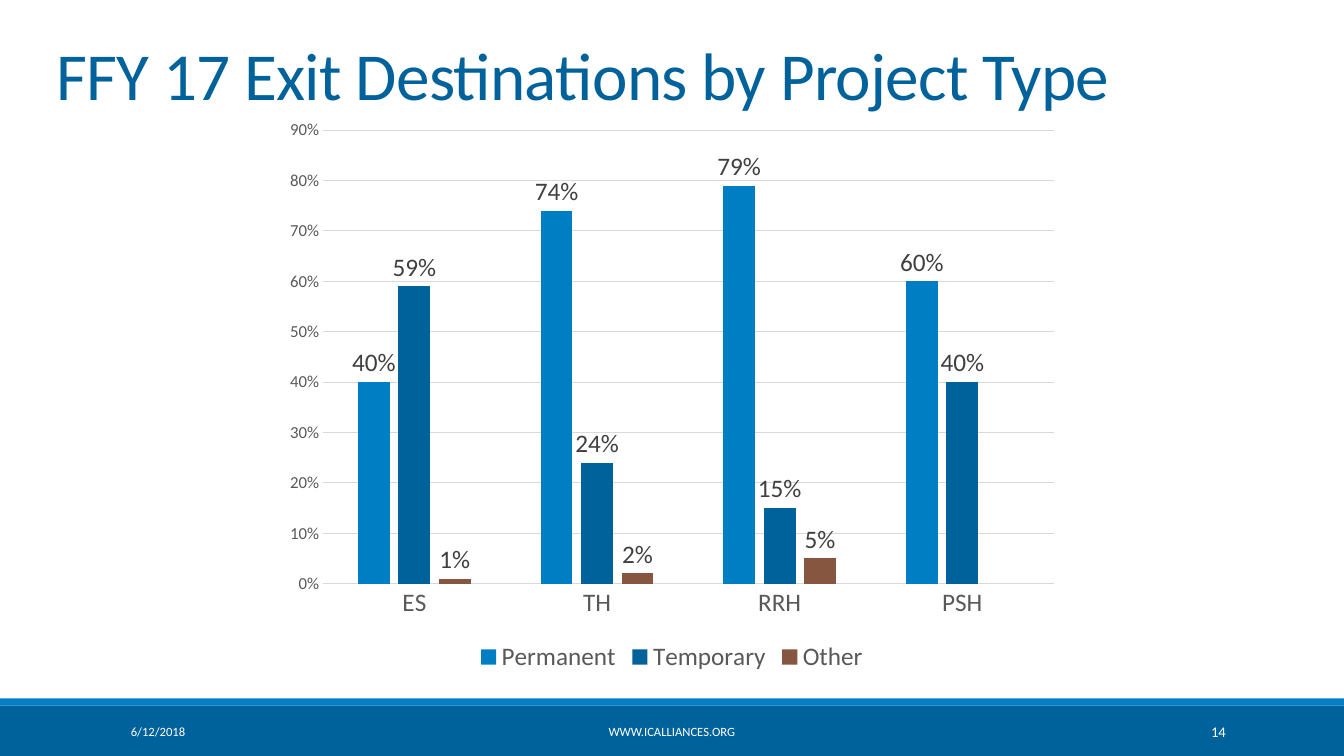
from pptx import Presentation
from pptx import util as u
from pptx.chart.data import CategoryChartData
from pptx.dml.color import RGBColor
from pptx.enum import chart as ch, shapes, text

COLORS = {"light": "007EC4", "dark": "00629B", "brown": "865640", "white": "FFFFFF",
          "grid": "D9D9D9", "axis": "595959", "label": "404040"}
FONT = "Calibri"
WIDTH, HEIGHT = 960, 540
LEFT, CENTER, RIGHT = text.PP_ALIGN.LEFT, text.PP_ALIGN.CENTER, text.PP_ALIGN.RIGHT

TITLE = "FFY 17 Exit Destinations by Project Type"
# text, left, width, size, alignment
FOOTERS = [
    ("6/12/2018", 86.4, 194.4, 9, LEFT),
    ("WWW.ICALLIANCES.ORG", 290.16, 379.44, 9, CENTER),
    ("14", 779.76, 102.96, 10.5, RIGHT),
]
# top, height, color
BANDS = [(504, 36, "dark"), (498.96, 5.04, "light")]
PROJECT_TYPES = ["ES", "TH", "RRH", "PSH"]
# destination, color, share by project type
DESTINATIONS = [
    ("Permanent", "light", (0.4, 0.74, 0.79, 0.6)),
    ("Temporary", "dark", (0.59, 0.24, 0.15, 0.4)),
    ("Other", "brown", (0.01, 0.02, 0.05, None)),
]


def rgb(name):
    return RGBColor.from_string(COLORS[name])


def place(*lengths):
    return [u.Pt(length) for length in lengths]


def style(font, size, color):
    font.name, font.size, font.bold = FONT, u.Pt(size), False
    font.color.rgb = rgb(color)


def draw_line(line, color):
    line.color.rgb = rgb(color)
    line.width = u.Pt(0.75)


def add_text(page, words, area, size, color, align, anchor):
    box = page.shapes.add_textbox(*place(*area))
    frame = box.text_frame
    frame.word_wrap = True
    frame.vertical_anchor = anchor
    frame.text = words
    para = frame.paragraphs[0]
    para.alignment = align
    style(para.runs[0].font, size, color)
    return para


def add_band(page, top, height, color):
    band = page.shapes.add_shape(shapes.MSO_SHAPE.RECTANGLE, *place(0, top, WIDTH, height))
    band.shadow.inherit = False
    band.fill.solid()
    band.fill.fore_color.rgb = rgb(color)
    band.line.fill.background()


def add_destination_chart(page):
    data = CategoryChartData(number_format="0%")
    data.categories = PROJECT_TYPES
    for name, _, shares in DESTINATIONS:
        data.add_series(name, shares)
    chart = page.shapes.add_chart(ch.XL_CHART_TYPE.COLUMN_CLUSTERED,
                                  *place(195.84, 77.76, 568.08, 406.08), data).chart
    style(chart.font, 18, "axis")
    chart.has_title = False
    chart.has_legend = True
    chart.legend.position = ch.XL_LEGEND_POSITION.BOTTOM
    chart.legend.include_in_layout = False
    style(chart.legend.font, 18, "axis")

    for axis, size in ((chart.category_axis, 18), (chart.value_axis, 12)):
        axis.major_tick_mark = axis.minor_tick_mark = ch.XL_TICK_MARK.NONE
        style(axis.tick_labels.font, size, "axis")
    draw_line(chart.category_axis.format.line, "grid")
    shares_axis = chart.value_axis
    shares_axis.minimum_scale, shares_axis.maximum_scale, shares_axis.major_unit = 0, 0.9, 0.1
    shares_axis.tick_labels.number_format = "0%"
    shares_axis.tick_labels.number_format_is_linked = False
    shares_axis.format.line.fill.background()
    draw_line(shares_axis.major_gridlines.format.line, "grid")

    plot = chart.plots[0]
    plot.gap_width, plot.overlap = 219, -27
    plot.vary_by_categories = False
    for series, (_, color, _) in zip(plot.series, DESTINATIONS):
        series.format.fill.solid()
        series.format.fill.fore_color.rgb = rgb(color)
        series.invert_if_negative = False
        labels = series.data_labels
        labels.show_value = True
        labels.position = ch.XL_LABEL_POSITION.OUTSIDE_END
        labels.number_format, labels.number_format_is_linked = "0%", False
        style(labels.font, 18, "label")


def main():
    deck = Presentation()
    deck.slide_width, deck.slide_height = place(WIDTH, HEIGHT)
    page = deck.slides.add_slide(deck.slide_layouts[6])
    for band in BANDS:
        add_band(page, *band)
    for words, left, width, size, align in FOOTERS:
        add_text(page, words, (left, 508.32, width, 28.8), size, "white", align,
                 text.MSO_ANCHOR.MIDDLE)
    title = add_text(page, TITLE, (33.12, 12.96, 792, 72), 48, "dark", LEFT,
                     text.MSO_ANCHOR.BOTTOM)
    title.line_spacing = 0.85
    title.runs[0].font._element.set("spc", "-50")
    add_destination_chart(page)
    deck.save("out.pptx")


if __name__ == "__main__":
    main()
